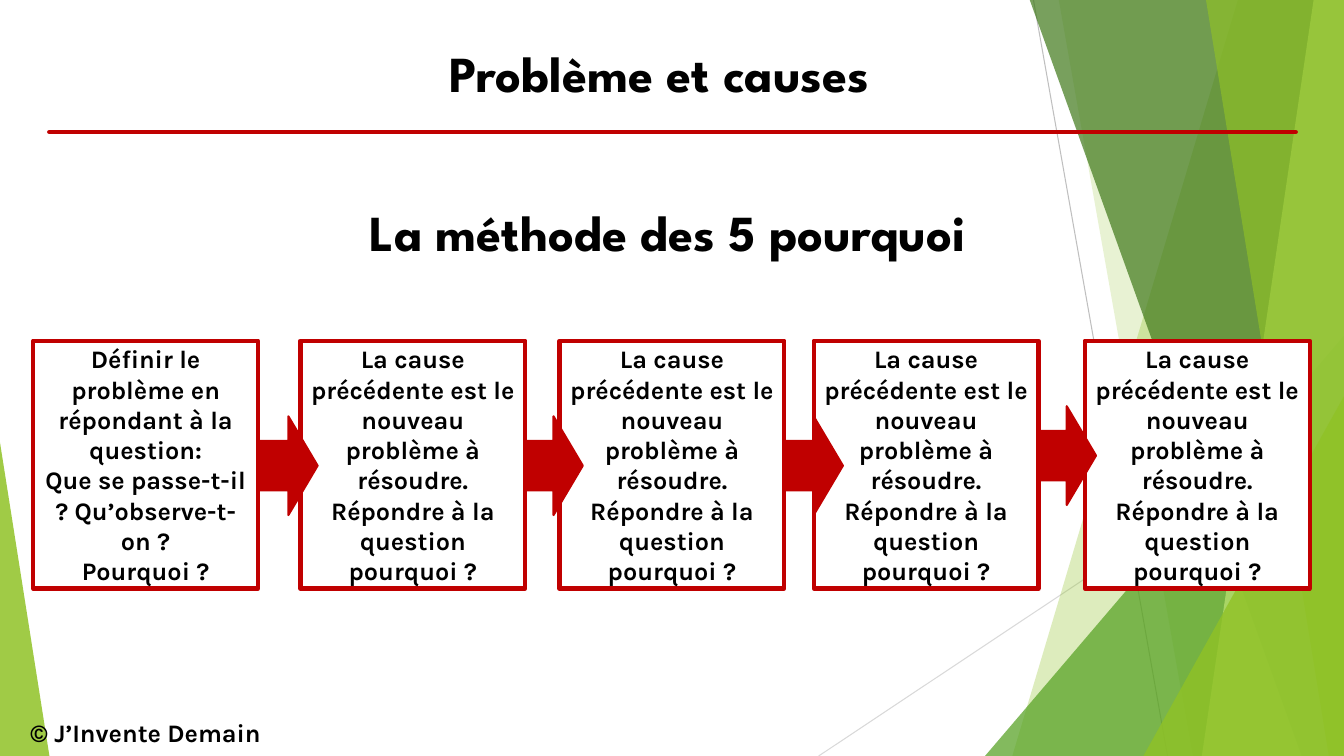
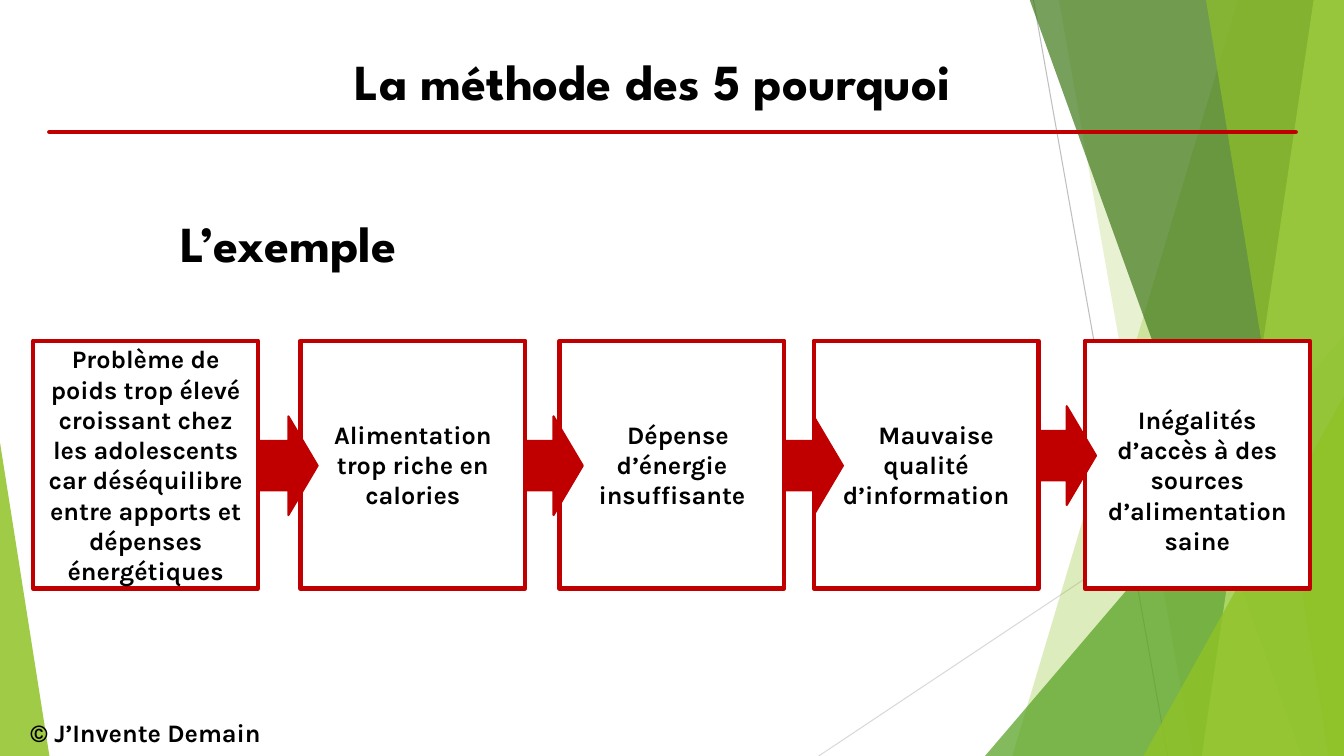
from lxml import etree
from pptx import Presentation
from pptx.dml.color import RGBColor
from pptx.enum.shapes import MSO_CONNECTOR, MSO_SHAPE
from pptx.enum.text import MSO_ANCHOR, MSO_AUTO_SIZE, PP_ALIGN
from pptx.oxml.ns import qn
from pptx.util import Inches, Pt

color = RGBColor.from_string
RED, WHITE, BLACK, LIME = "C00000", "FFFFFF", "000000", "90C226"
HEADING_FONT, BODY_FONT = "League Spartan", "Karla"
WIDTH, HEIGHT = 13.33, 7.5


def paint(shape, fill, line=None, line_width=0, opacity=100):
    """Flat fill, with an optional outline and an opacity in percent."""
    shape.shadow.inherit = False
    shape.fill.solid()
    shape.fill.fore_color.rgb = color(fill)
    if opacity < 100:
        fill_color = shape.element.spPr.find(qn("a:solidFill"))[0]
        etree.SubElement(fill_color, qn("a:alpha"), val=str(opacity * 1000))
    if line:
        shape.line.color.rgb = color(line)
        shape.line.width = Pt(line_width)
    else:
        shape.line.fill.background()


def write(text_frame, lines, font, size, alignment, anchor=MSO_ANCHOR.TOP):
    """One bold black paragraph for each line."""
    text_frame.word_wrap = True
    text_frame.auto_size = MSO_AUTO_SIZE.NONE
    text_frame.vertical_anchor = anchor
    text_frame.text = "\n".join(lines)
    for paragraph in text_frame.paragraphs:
        paragraph.alignment = alignment
        paragraph.font.name = font
        paragraph.font.size = Pt(size)
        paragraph.font.bold = True
        paragraph.font.color.rgb = color(BLACK)


presentation = Presentation()
presentation.slide_width = Inches(WIDTH)
presentation.slide_height = Inches(HEIGHT)
layout = presentation.slide_layouts[5]
for placeholder in list(layout.placeholders):
    if placeholder.placeholder_format.idx != 0:
        placeholder.element.getparent().remove(placeholder.element)

# Bands, corner triangles and rules, in drawing order from back to front
LINES = [  # start x, start y, end x, end y, colour, width
    (10.25, 0, 11.58, HEIGHT, "BFBFBF", 0.75),
    (WIDTH, 4.03, 8.12, HEIGHT, "D9D9D9", 0.75),
    (0.49, 1.31, 12.85, 1.31, RED, 3.25),
]
BAND, TRIANGLE = "band", "triangle"
DECORATION = [
    # band: left edge at the top, left edge at the bottom
    (BAND, (12.28, 10.04), LIME, 30),
    (BAND, (10.5, 11.83), LIME, 20),
    # triangle: left, top, width, apex
    (TRIANGLE, (9.77, 3.33, 3.56, 1), "54A021", 72),
    (BAND, (10.21, 12.91), "3F7819", 70),
    (BAND, (13.03, 11.92), "C0E474", 70),
    (BAND, (11.96, 13.18), LIME, 65),
    (TRIANGLE, (11.34, 3.93, 1.99, 1), LIME, 80),
    (TRIANGLE, (0, 4.39, 0.49, 0), LIME, 85),
]

# Process: boxes and the arrows between them
BOX_LEFTS = [0.33, 2.98, 5.55, 8.07, 10.76]
BOX_TOP, BOX_WIDTH, BOX_HEIGHT = 3.38, 2.23, 2.46
ARROWS = [(2.57, 4.13), (5.2, 4.13), (7.78, 4.13), (10.29, 4.03)]
ARROW_WIDTH, ARROW_HEIGHT = 0.58, 0.98

# Slide content; a box is its lines, first-line indent and top inset
NEXT_CAUSE = [
    "La cause précédente est le nouveau problème à résoudre.",
    "Répondre à la question",
    "pourquoi ?",
]
FIRST_PROBLEM = [
    "Définir le problème en répondant à la question:",
    "Que se passe-t-il ? Qu’observe-t-on ?",
    "Pourquoi ?",
]
SLIDES = [
    {
        # headings: text, left, top, width, right inset
        "title": ("Problème et causes", 3.8, 0.37, 5.07, 0.25),
        "subtitle": ("La méthode des 5 pourquoi", 2.85, 1.95, 6.98, 0.25),
        "boxes": [(FIRST_PROBLEM, 0, 0.05)] + [(NEXT_CAUSE, 0, 0.05)] * 4,
    },
    {
        "title": ("La méthode des 5 pourquoi", 2.67, 0.45, 7.01, 0.25),
        "subtitle": ("L’exemple", 1.12, 2.06, 2.91, 0.1),
        "boxes": [
            (["Problème de poids trop élevé croissant chez les adolescents "
              "car déséquilibre entre apports et dépenses énergétiques"], 0, 0.05),
            (["Alimentation trop riche en calories"], 0, 0.05),
            (["Dépense d’énergie insuffisante"], 0.12, 0.05),
            (["Mauvaise qualité d’information"], 0.2, 0.05),
            (["Inégalités d’accès à des sources d’alimentation saine"], 0, 0.35),
        ],
    },
]

slides = [presentation.slides.add_slide(layout) for _ in SLIDES]

# Shared background: drawn once, then moved to the layout
shapes = slides[0].shapes
background = []
for start_x, start_y, end_x, end_y, line_color, line_width in LINES:
    rule = shapes.add_connector(
        MSO_CONNECTOR.STRAIGHT,
        Inches(start_x), Inches(start_y), Inches(end_x), Inches(end_y))
    rule.line.color.rgb = color(line_color)
    rule.line.width = Pt(line_width)
    rule.line._get_or_add_ln().set("cap", "rnd")
    etree.SubElement(rule.element.spPr, qn("a:effectLst"))
    background.append(rule)
for kind, geometry, fill, opacity in DECORATION:
    if kind == BAND:
        top_x, bottom_x = geometry
        builder = shapes.build_freeform(Inches(top_x), Inches(-0.01))
        builder.add_line_segments([
            (Inches(WIDTH), Inches(-0.01)),
            (Inches(WIDTH), Inches(HEIGHT)),
            (Inches(bottom_x), Inches(HEIGHT)),
        ], close=True)
        shape = builder.convert_to_shape()
    else:
        left, top, width, apex = geometry
        shape = shapes.add_shape(
            MSO_SHAPE.ISOSCELES_TRIANGLE,
            Inches(left), Inches(top), Inches(width), Inches(HEIGHT - top))
        shape.adjustments[0] = apex
    paint(shape, fill, opacity=opacity)
    background.append(shape)
red_rule = background.pop(len(LINES) - 1)
for shape in background + [red_rule]:
    layout.shapes.element.append(shape.element)

for slide, content in zip(slides, SLIDES):
    # Title and subtitle
    subtitle = slide.shapes.add_textbox(0, 0, 0, 0)
    for heading, key in ((slide.shapes.title, "title"), (subtitle, "subtitle")):
        text, left, top, width, right_inset = content[key]
        heading.left, heading.top = Inches(left), Inches(top)
        heading.width, heading.height = Inches(width), Inches(0.71)
        write(heading.text_frame, [text], HEADING_FONT, 36, PP_ALIGN.RIGHT)
        heading.text_frame.margin_right = Inches(right_inset)

    # Boxes
    for left, (lines, indent, top_inset) in zip(BOX_LEFTS, content["boxes"]):
        box = slide.shapes.add_shape(
            MSO_SHAPE.RECTANGLE,
            Inches(left), Inches(BOX_TOP), Inches(BOX_WIDTH), Inches(BOX_HEIGHT))
        paint(box, WHITE, RED, 3)
        write(box.text_frame, lines, BODY_FONT, 18, PP_ALIGN.CENTER, MSO_ANCHOR.MIDDLE)
        box.text_frame.margin_top = Inches(top_inset)
        if indent:
            properties = box.text_frame.paragraphs[0]._p.get_or_add_pPr()
            properties.set("indent", str(Inches(indent)))

    # Arrows
    for left, top in ARROWS:
        arrow = slide.shapes.add_shape(
            MSO_SHAPE.RIGHT_ARROW,
            Inches(left), Inches(top), Inches(ARROW_WIDTH), Inches(ARROW_HEIGHT))
        paint(arrow, RED, RED, 1.5)

    # Footer
    footer = slide.shapes.add_textbox(Inches(0.2), Inches(7.07), Inches(3.9), Inches(0.4))
    write(footer.text_frame, ["© J’Invente Demain"], BODY_FONT, 18, PP_ALIGN.LEFT)

presentation.save("out.pptx")
